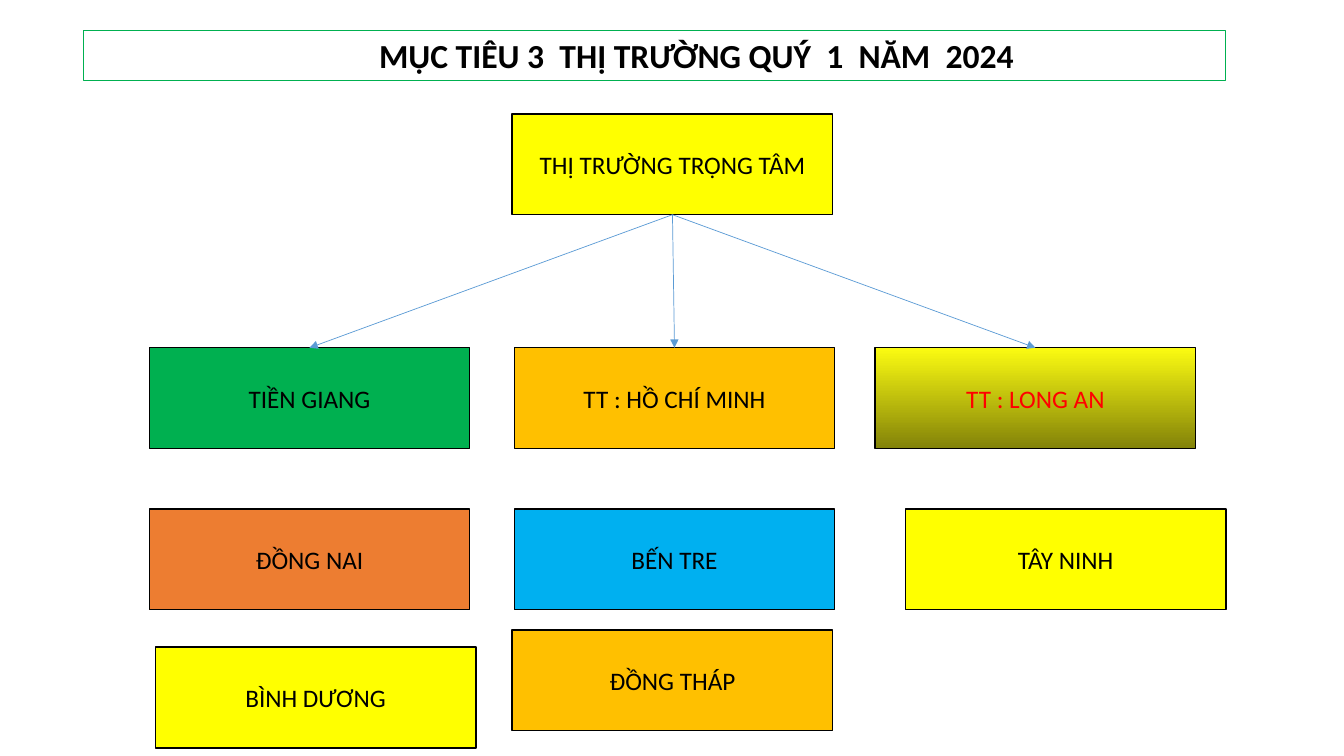
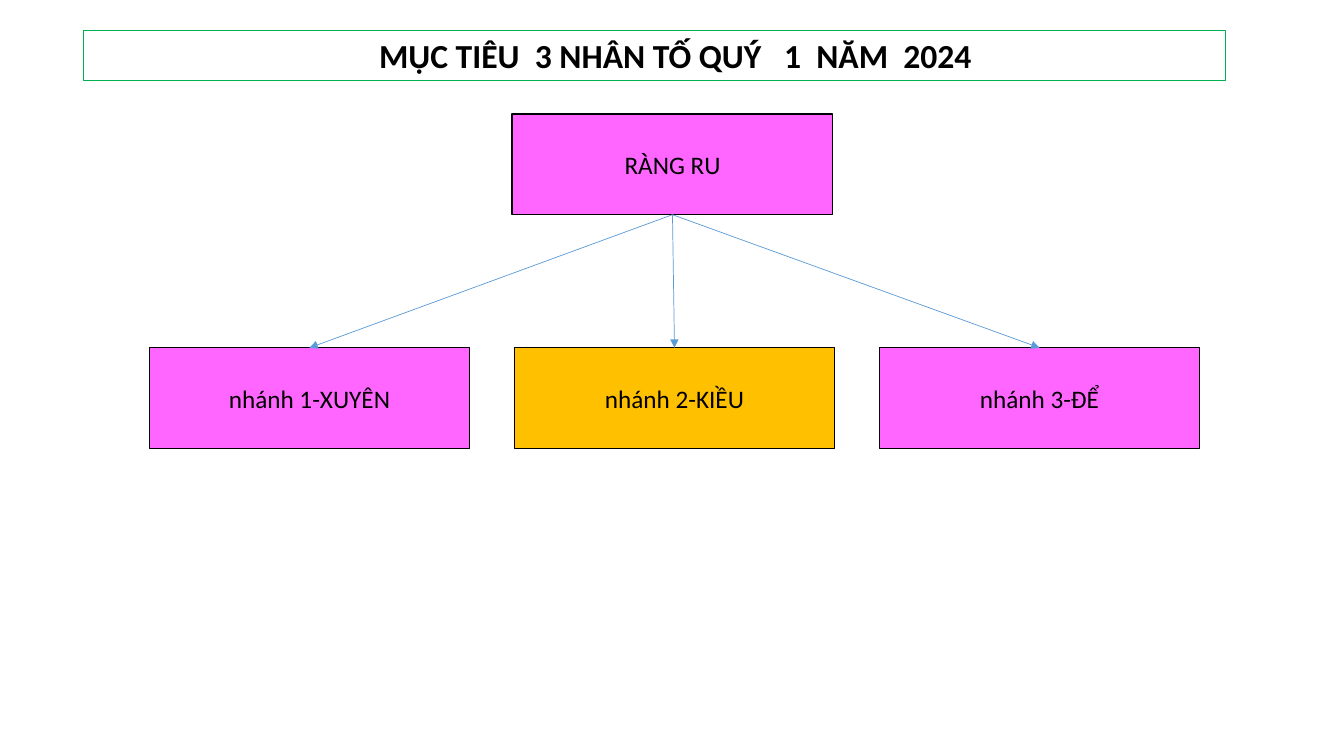
from lxml import etree
from pptx import Presentation
from pptx.dml.color import RGBColor
from pptx.enum.shapes import MSO_CONNECTOR, MSO_SHAPE
from pptx.enum.text import MSO_ANCHOR, PP_ALIGN
from pptx.oxml.ns import qn
from pptx.util import Emu, Pt

RECTANGLE = MSO_SHAPE.RECTANGLE
STRAIGHT = MSO_CONNECTOR.STRAIGHT
MIDDLE = MSO_ANCHOR.MIDDLE
TOP = MSO_ANCHOR.TOP
CENTER = PP_ALIGN.CENTER
LEFT = PP_ALIGN.LEFT

EMU_PER_PX = 9144
BOX_WIDTH, BOX_HEIGHT = 318, 100
ROOT_AT = (508, 113)
COLUMNS = [148 + 362 * column for column in range(3)]
BRANCH_TOP, SECOND_TOP = 345, 505
BOTTOM_SITE, TOP_SITE = 2, 0

BLACK, WHITE, RED = "000000", "FFFFFF", "FF0000"
YELLOW, AMBER, PINK = "FFFF00", "FFC000", "FF66FF"
GREEN, ORANGE, SKY, ARROW_BLUE = "00B050", "ED7D31", "00B0F0", "5B9BD5"
OLIVE_FADE = ("FBFB11", "838309")


def px(length):
    return Emu(length * EMU_PER_PX)


def rgb(value):
    return RGBColor.from_string(value)


def write(box, text, size=18, bold=False, color=BLACK, align=CENTER, anchor=MIDDLE, inset=10):
    frame = box.text_frame
    frame.word_wrap = True
    frame.vertical_anchor = anchor
    frame.margin_left = px(inset)
    para = frame.paragraphs[0]
    para.alignment = align
    span = para.add_run()
    span.text = text
    span.font.name = "Calibri"
    span.font.size = Pt(size)
    span.font.bold = bold
    span.font.color.rgb = rgb(color)


class Deck:
    def __init__(self):
        self.deck = Presentation()
        self.deck.slide_width = px(1333)
        self.deck.slide_height = px(750)
        self.page = None

    def add_page(self, title):
        self.page = self.deck.slides.add_slide(self.deck.slide_layouts[6])
        band = self.rectangle(83, 30, 1133, 50, WHITE, GREEN, 0.75)
        write(band, title, size=24, bold=True, align=LEFT, anchor=TOP, inset=293)

    def rectangle(self, left, top, width, height, fill, line, weight):
        box = self.page.shapes.add_shape(RECTANGLE, px(left), px(top), px(width), px(height))
        box.shadow.inherit = False
        if isinstance(fill, tuple):
            box.fill.gradient()
            box.fill.gradient_angle = 270
            for stop, position, color in zip(box.fill.gradient_stops, (0, 1), fill):
                stop.position = position
                stop.color.rgb = rgb(color)
        else:
            box.fill.solid()
            box.fill.fore_color.rgb = rgb(fill)
        box.line.color.rgb = rgb(line)
        box.line.width = Pt(weight)
        return box

    def node(self, text, left, top, fill, color=BLACK):
        box = self.rectangle(left, top, BOX_WIDTH, BOX_HEIGHT, fill, BLACK, 1)
        write(box, text, color=color)
        return box

    def arrow(self, parent, child):
        line = self.page.shapes.add_connector(STRAIGHT, 0, 0, 0, 0)
        line.begin_connect(parent, BOTTOM_SITE)
        line.end_connect(child, TOP_SITE)
        line.line.color.rgb = rgb(ARROW_BLUE)
        line.line.width = Pt(0.5)
        properties = line.element.spPr
        etree.SubElement(properties.find(qn("a:ln")), qn("a:tailEnd"), type="triangle")
        etree.SubElement(properties, qn("a:effectLst"))

    def tree(self, root, branches):
        text, fill = root
        parent = self.node(text, *ROOT_AT, fill)
        children = [self.node(name, left, BRANCH_TOP, *colors) for name, left, *colors in branches]
        for child in children:
            self.arrow(parent, child)

    def save(self):
        self.deck.save("out.pptx")


def main():
    deck = Deck()
    first, second, third = COLUMNS

    deck.add_page("MỤC TIÊU 3  THỊ TRƯỜNG QUÝ  1  NĂM  2024")
    deck.tree(("THỊ TRƯỜNG TRỌNG TÂM", YELLOW), [
        ("TIỀN GIANG", first, GREEN),
        ("TT : HỒ CHÍ MINH", second, AMBER),
        ("TT : LONG AN", 868, OLIVE_FADE, RED),
    ])
    for province in (
        ("ĐỒNG NAI", first, SECOND_TOP, ORANGE),
        ("BẾN TRE", second, SECOND_TOP, SKY),
        ("TÂY NINH", 898, SECOND_TOP, YELLOW),
        ("BÌNH DƯƠNG", 154, 642, YELLOW),
        ("ĐỒNG THÁP", 508, 625, AMBER),
    ):
        deck.node(*province)

    deck.add_page("MỤC TIÊU  3 NHÂN TỐ QUÝ   1  NĂM  2024")
    deck.tree(("RÀNG RU", PINK), [
        ("nhánh 1-XUYÊN", first, PINK),
        ("nhánh 2-KIỀU", second, AMBER),
        ("nhánh 3-ĐỂ", third, PINK),
    ])
    deck.save()


if __name__ == "__main__":
    main()
